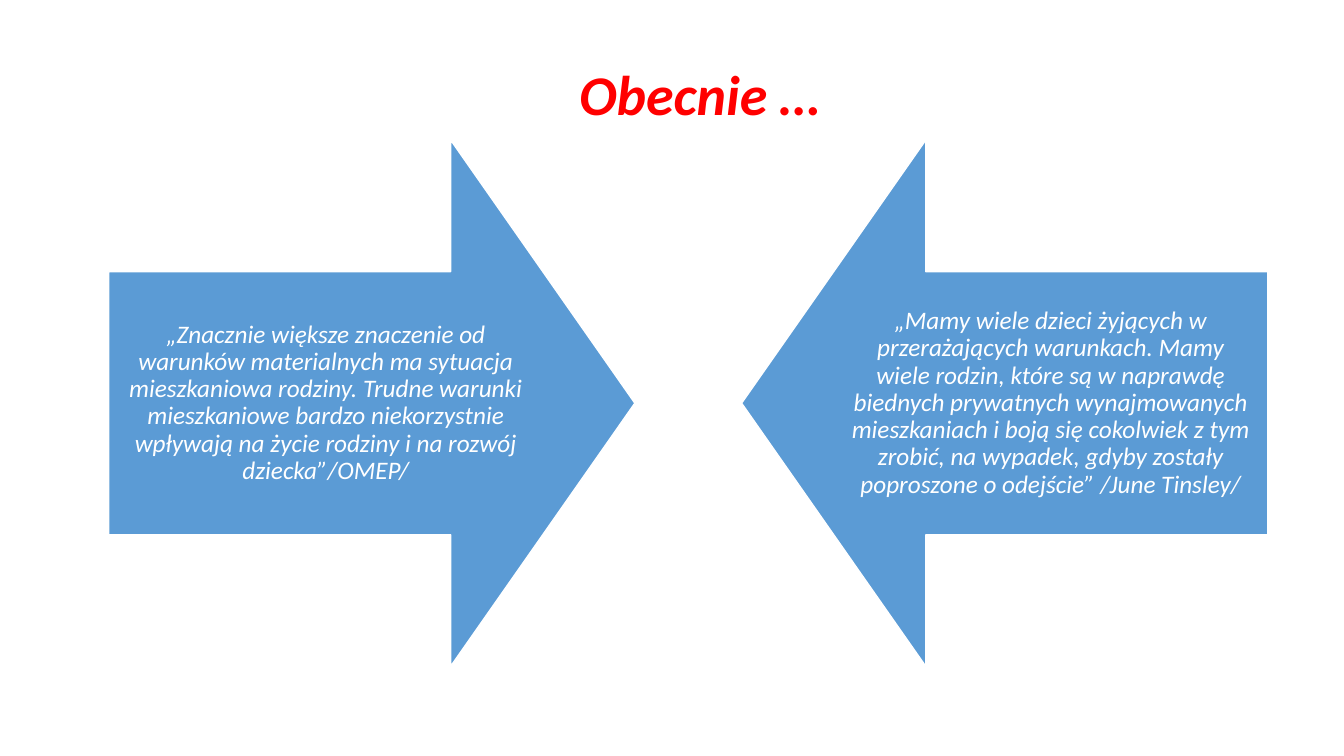
"""Build a slide with two quotations in arrows that point at each other."""
from dataclasses import dataclass

import pptx
import pptx.dml.color
import pptx.enum.shapes
import pptx.enum.text
import pptx.util

Cm = pptx.util.Cm
Shapes = pptx.enum.shapes.MSO_SHAPE
Align = pptx.enum.text.PP_ALIGN


@dataclass(frozen=True)
class Theme:
    font: str = "Calibri"
    title_color: str = "FF0000"
    arrow_color: str = "5B9BD5"
    light: str = "FFFFFF"
    title_size: int = 40
    quote_size: int = 18
    line_spacing: float = 0.9


class SlideBuilder:
    def __init__(self, page, theme):
        self.page = page
        self.theme = theme

    def color(self, value):
        return pptx.dml.color.RGBColor.from_string(value)

    def add_words(self, shape, text, size, color, align, bold=False):
        frame = shape.text_frame
        frame.word_wrap = True
        frame.vertical_anchor = pptx.enum.text.MSO_ANCHOR.MIDDLE
        para = frame.paragraphs[0]
        para.alignment = align
        para.line_spacing = self.theme.line_spacing
        span = para.add_run()
        span.text = text
        span.font.name = self.theme.font
        span.font.size = pptx.util.Pt(size)
        span.font.bold = bold
        span.font.italic = True
        span.font.color.rgb = self.color(color)

    def title(self, text, left, top, width, height):
        box = self.page.shapes.add_textbox(Cm(left), Cm(top), Cm(width), Cm(height))
        self.add_words(box, text, self.theme.title_size, self.theme.title_color, Align.LEFT, bold=True)

    def quote_arrow(self, kind, text, left, top, side):
        arrow = self.page.shapes.add_shape(kind, Cm(left), Cm(top), Cm(side), Cm(side))
        arrow.adjustments[0] = 0.5
        arrow.adjustments[1] = 0.35
        arrow.shadow.inherit = False
        arrow.fill.solid()
        arrow.fill.fore_color.rgb = self.color(self.theme.arrow_color)
        arrow.line.color.rgb = self.color(self.theme.light)
        arrow.line.width = pptx.util.Pt(1)
        frame = arrow.text_frame
        frame.margin_left = frame.margin_right = Cm(0.36)
        frame.margin_top = frame.margin_bottom = Cm(0.36)
        self.add_words(arrow, text, self.theme.quote_size, self.theme.light, Align.CENTER)


def main():
    deck = pptx.Presentation()
    deck.slide_width = Cm(33.87)
    deck.slide_height = Cm(19.05)
    page = deck.slides.add_slide(deck.slide_layouts[6])
    builder = SlideBuilder(page, Theme())
    builder.title("Obecnie …", 14.35, 1.4, 7.8, 2.13)
    quotes = [
        (Shapes.RIGHT_ARROW, 2.74,
         "„Znacznie większe znaczenie od warunków materialnych ma sytuacja "
         "mieszkaniowa rodziny. Trudne warunki mieszkaniowe bardzo niekorzystnie "
         "wpływają na życie rodziny i na rozwój dziecka”/OMEP/"),
        (Shapes.LEFT_ARROW, 18.69,
         "„Mamy wiele dzieci żyjących w przerażających warunkach. Mamy wiele "
         "rodzin, które są w naprawdę biednych prywatnych wynajmowanych "
         "mieszkaniach i boją się cokolwiek z tym zrobić, na wypadek, gdyby "
         "zostały poproszone o odejście” /June Tinsley/"),
    ]
    for kind, left, text in quotes:
        builder.quote_arrow(kind, text, left, top=3.53, side=13.26)
    deck.save("out.pptx")


if __name__ == "__main__":
    main()
